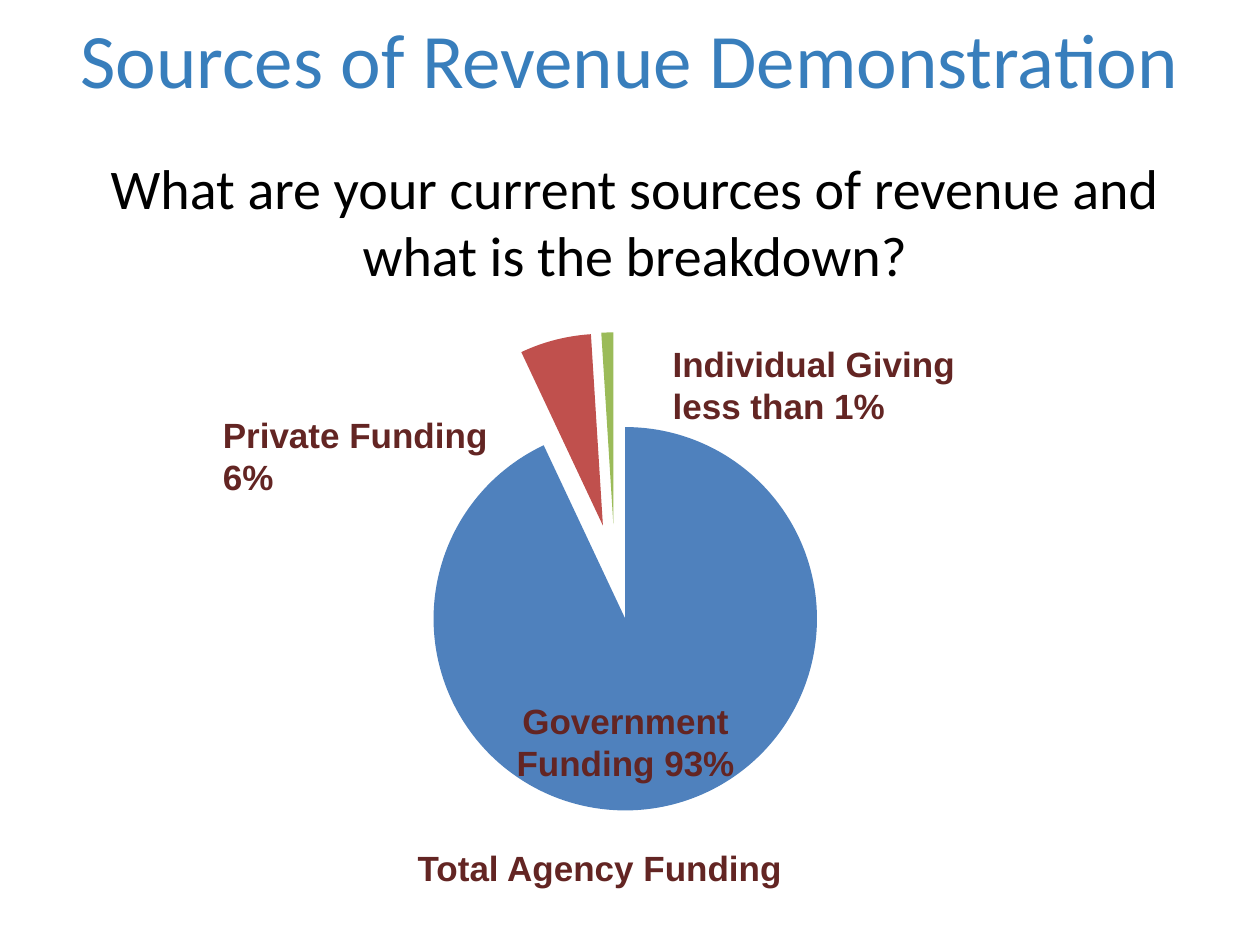
from dataclasses import dataclass

from lxml.etree import SubElement
from pptx import Presentation
from pptx.chart.data import CategoryChartData
from pptx.dml.color import RGBColor
from pptx.enum.chart import XL_CHART_TYPE
from pptx.enum.text import MSO_ANCHOR, PP_ALIGN
from pptx.oxml.ns import qn
from pptx.util import Inches, Pt


@dataclass(frozen=True)
class Theme:
    heading_font: str = "Calibri"
    label_font: str = "Arial"
    title_color: str = "387EBC"
    text_color: str = "000000"
    label_color: str = "632523"
    slice_colors: tuple = ("4F81BD", "C0504D", "9BBB59")
    title_size: int = 44
    question_size: int = 32
    label_size: int = 20
    chart_size: int = 10


THEME = Theme()

# Content: boxes are left, top, width, height in inches
TITLE = ("Sources of Revenue Demonstration", (0.5, 0, 9, 0.92))
QUESTION = ("What are your current sources of revenue and what is the breakdown?",
            (0.5, 1.17, 9.08, 1.3))
SHARES = {"1": 93, "2": 6, "3": 1}
CHART_BOX = (0.42, 2.5, 8.92, 4.08)
EXPLOSION = 25
LABELS = [
    ("Government\nFunding 93%", (3.92, 5.5, 2.09, 0.77), PP_ALIGN.CENTER),
    ("Private Funding 6%", (1.67, 3.23, 2.5, 0.77), PP_ALIGN.LEFT),
    ("Individual Giving\nless than 1%", (5.24, 2.67, 2.76, 0.77), PP_ALIGN.LEFT),
    ("Total Agency Funding", (3.1, 6.67, 3.32, 0.44), PP_ALIGN.CENTER),
]


def place(box):
    return [Inches(length) for length in box]


def add_text(page, text, box, font, size, color, bold=False,
             align=PP_ALIGN.CENTER, anchor=MSO_ANCHOR.TOP):
    frame = page.shapes.add_textbox(*place(box)).text_frame
    frame.word_wrap = True
    frame.vertical_anchor = anchor
    frame.text = text
    for paragraph in frame.paragraphs:
        paragraph.alignment = align
        for span in paragraph.runs:
            span.font.name = font
            span.font.size = Pt(size)
            span.font.bold = bold
            span.font.color.rgb = RGBColor.from_string(color)


def add_pie(page):
    data = CategoryChartData()
    data.categories = list(SHARES)
    data.add_series("Series 1", list(SHARES.values()))
    chart = page.shapes.add_chart(XL_CHART_TYPE.PIE, *place(CHART_BOX), data).chart
    chart.has_title = False
    chart.has_legend = False
    chart.font.name = THEME.heading_font
    chart.font.size = Pt(THEME.chart_size)
    chart.font.color.rgb = RGBColor.from_string(THEME.text_color)
    plot = chart.plots[0]
    plot.vary_by_categories = True
    series = plot.series[0]
    for index, color in enumerate(THEME.slice_colors):
        fill = series.points[index].format.fill
        fill.solid()
        fill.fore_color.rgb = RGBColor.from_string(color)

    # Pull every slice away from the centre
    for point in series._element.findall(qn("c:dPt")):
        explosion = SubElement(point, qn("c:explosion"))
        explosion.set("val", str(EXPLOSION))
        point.find(qn("c:spPr")).addprevious(explosion)


def main():
    deck = Presentation()
    deck.slide_width, deck.slide_height = Inches(10), Inches(7.5)
    page = deck.slides.add_slide(deck.slide_layouts[6])

    # Title and question
    add_text(page, *TITLE, THEME.heading_font, THEME.title_size,
             THEME.title_color, anchor=MSO_ANCHOR.MIDDLE)
    add_text(page, *QUESTION, THEME.heading_font, THEME.question_size,
             THEME.text_color)

    # Pie with its labels on top
    add_pie(page)
    for text, box, align in LABELS:
        add_text(page, text, box, THEME.label_font, THEME.label_size,
                 THEME.label_color, bold=True, align=align)

    deck.save("out.pptx")


if __name__ == "__main__":
    main()
